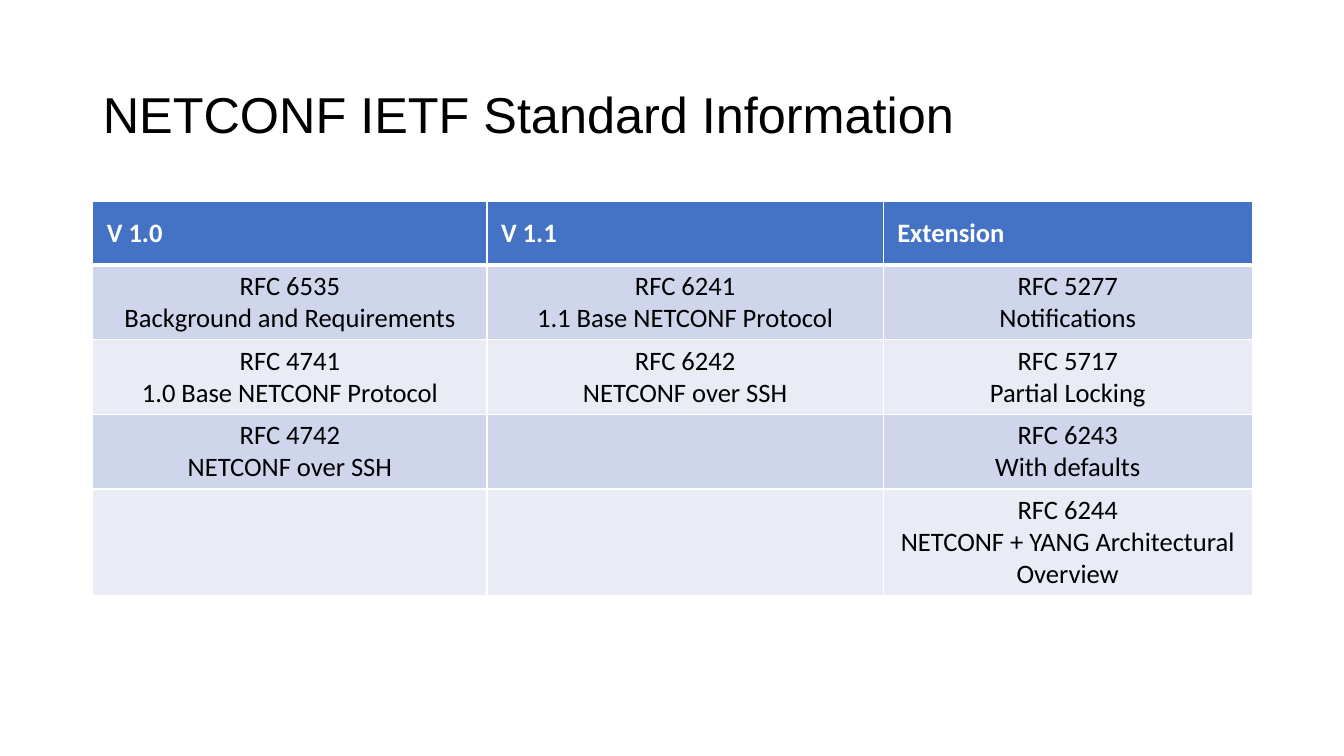
from lxml.etree import SubElement
from pptx import Presentation
from pptx.dml.color import RGBColor
from pptx.enum.text import MSO_ANCHOR, PP_ALIGN
from pptx.oxml.ns import qn
from pptx.util import Inches, Pt

COLORS = {
    "text": "000000",
    "white": "FFFFFF",
    "header": "4472C4",
    "odd_row": "CFD5EA",
    "even_row": "E9EBF5",
}
LEFT, WIDTH = 0.92, 11.5
COLUMN_WIDTHS = [3.91, 3.93, 3.66]
ROW_HEIGHTS = [0.63, 0.72, 0.72, 0.72, 1.03]
STANDARDS = [
    ["V 1.0", "V 1.1", "Extension"],
    ["RFC 6535\nBackground and Requirements",
     "RFC 6241\n1.1 Base NETCONF Protocol",
     "RFC 5277\nNotifications"],
    ["RFC 4741\n1.0 Base NETCONF Protocol",
     "RFC 6242\nNETCONF over SSH",
     "RFC 5717\nPartial Locking"],
    ["RFC 4742\nNETCONF over SSH", "", "RFC 6243\nWith defaults"],
    ["", "", "RFC 6244\nNETCONF + YANG Architectural Overview"],
]


class StandardsSlide:
    def __init__(self, presentation):
        self.slide = presentation.slides.add_slide(presentation.slide_layouts[5])

    def style(self, font, name, size, color, bold=False):
        font.name = name
        font.size = Pt(size)
        font.bold = bold
        font.color.rgb = RGBColor.from_string(COLORS[color])

    def title(self, pieces):
        """Fill the title from (text, font name, size) pieces."""
        title = self.slide.shapes.title
        title.left, title.top = Inches(LEFT), Inches(0.4)
        title.width, title.height = Inches(WIDTH), Inches(1.45)
        title.text_frame.vertical_anchor = MSO_ANCHOR.MIDDLE
        heading = title.text_frame.paragraphs[0]
        heading.alignment = PP_ALIGN.LEFT
        heading.line_spacing = 0.9
        for text, name, size in pieces:
            run = heading.add_run()
            run.text = text
            self.style(run.font, name, size, "text")

    def borders(self, cell, bottom_width):
        properties = cell._tc.get_or_add_tcPr()
        for side, width in (("L", 1), ("R", 1), ("T", 1), ("B", bottom_width)):
            line = SubElement(properties, qn(f"a:ln{side}"), w=str(Pt(width)))
            fill = SubElement(line, qn("a:solidFill"))
            SubElement(fill, qn("a:srgbClr"), val=COLORS["white"])

    def cell(self, cell, text, fill, is_header):
        self.borders(cell, 3 if is_header else 1)
        cell.fill.solid()
        cell.fill.fore_color.rgb = RGBColor.from_string(COLORS[fill])
        cell.vertical_anchor = MSO_ANCHOR.MIDDLE
        cell.margin_left = cell.margin_right = Inches(0.14)
        cell.margin_top = cell.margin_bottom = Inches(0.05)
        cell.text = text
        for paragraph in cell.text_frame.paragraphs:
            paragraph.alignment = PP_ALIGN.LEFT if is_header else PP_ALIGN.CENTER
            self.style(paragraph.font, "Calibri", 19,
                       "white" if is_header else "text", is_header)

    def table(self, rows):
        table = self.slide.shapes.add_table(
            len(rows), len(COLUMN_WIDTHS), Inches(LEFT), Inches(2),
            Inches(WIDTH), Inches(sum(ROW_HEIGHTS))).table
        for column, width in zip(table.columns, COLUMN_WIDTHS):
            column.width = Inches(width)
        for r, (texts, height) in enumerate(zip(rows, ROW_HEIGHTS)):
            table.rows[r].height = Inches(height)
            fill = "header" if r == 0 else "odd_row" if r % 2 else "even_row"
            for c, text in enumerate(texts):
                self.cell(table.cell(r, c), text, fill, r == 0)


def main():
    presentation = Presentation()
    presentation.slide_width = Inches(13.33)
    presentation.slide_height = Inches(7.5)
    standards = StandardsSlide(presentation)
    standards.title([("NETCONF", "Arial", 36), (" ", "Calibri", 44),
                     ("IETF Standard Information", "Arial", 36)])
    standards.table(STANDARDS)
    presentation.save("out.pptx")


if __name__ == "__main__":
    main()
